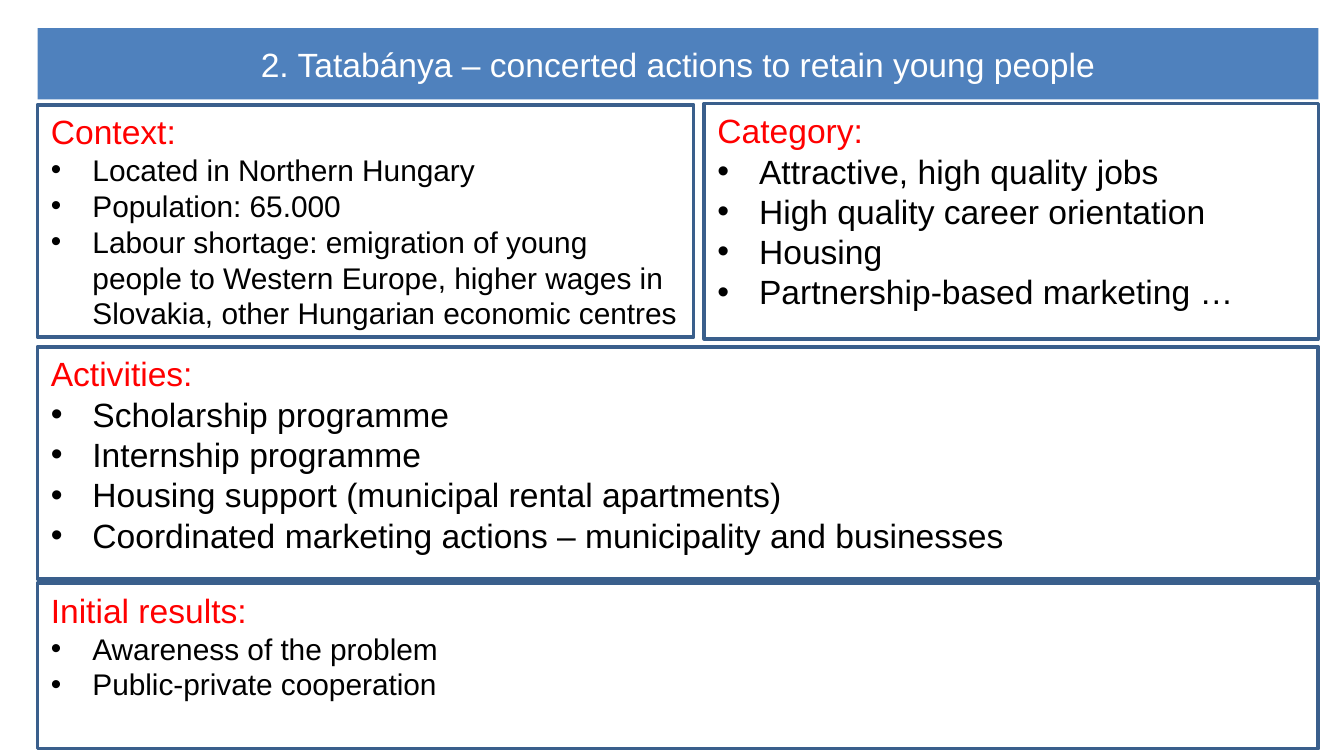
from lxml import etree
from pptx import Presentation
from pptx import util as u
from pptx.dml.color import RGBColor
from pptx.enum import shapes, text
from pptx.oxml import ns

BLUE = RGBColor(0x4F, 0x81, 0xBD)
DARK_BLUE = RGBColor(0x3A, 0x5F, 0x8C)
WHITE = RGBColor(0xFF, 0xFF, 0xFF)
RED = RGBColor(0xFF, 0x00, 0x00)
BLACK = RGBColor(0x00, 0x00, 0x00)

# Grid in inches: one full-width column, split in two on the second row
LEFT, FULL_WIDTH, GAP = 0.28, 9.53, 0.08
CONTEXT_WIDTH = 4.88
CATEGORY_LEFT = LEFT + CONTEXT_WIDTH + GAP
CATEGORY_WIDTH = LEFT + FULL_WIDTH - CATEGORY_LEFT
PANEL_HEIGHT = 1.73
INDENT = u.Inches(0.31)

presentation = Presentation()
presentation.slide_width = u.Inches(10)
presentation.slide_height = presentation.slide_width * 9 // 16
slide = presentation.slides.add_slide(presentation.slide_layouts[6])


def add_box(bounds, fill):
    shape = slide.shapes.add_shape(
        shapes.MSO_SHAPE.RECTANGLE, *[u.Inches(length) for length in bounds])
    shape.shadow.inherit = False
    shape.fill.solid()
    shape.fill.fore_color.rgb = fill
    shape.text_frame.word_wrap = True
    return shape


def write(paragraph, words, size, color, alignment=text.PP_ALIGN.LEFT):
    paragraph.text = words
    paragraph.alignment = alignment
    font = paragraph.runs[0].font
    font.color.rgb = color
    for name, value in {"name": "Arial", "size": u.Pt(size)}.items():
        setattr(font, name, value)


banner = add_box((LEFT, 0.21, FULL_WIDTH, 0.53), BLUE)
banner.line.fill.background()
banner.text_frame.vertical_anchor = text.MSO_ANCHOR.MIDDLE
write(banner.text_frame.paragraphs[0],
      "2. Tatabánya – concerted actions to retain young people",
      18, WHITE, text.PP_ALIGN.CENTER)

# Bounds, heading, bullet size, bullets
panels = [
    ((LEFT, 0.78, CONTEXT_WIDTH, PANEL_HEIGHT), "Context:", 16, [
        "Located in Northern Hungary",
        "Population: 65.000",
        "Labour shortage: emigration of young people to Western Europe, "
        "higher wages in Slovakia, other Hungarian economic centres"]),
    ((CATEGORY_LEFT, 0.77, CATEGORY_WIDTH, 1.75), "Category:", 18, [
        "Attractive, high quality jobs",
        "High quality career orientation",
        "Housing",
        "Partnership-based marketing …"]),
    ((LEFT, 2.58, FULL_WIDTH, PANEL_HEIGHT), "Activities:", 18, [
        "Scholarship programme",
        "Internship programme",
        "Housing support (municipal rental apartments)",
        "Coordinated marketing actions – municipality and businesses"]),
    ((LEFT, 4.34, FULL_WIDTH, 1.23), "Initial results:", 16, [
        "Awareness of the problem",
        "Public-private cooperation"]),
]

for bounds, heading, bullet_size, bullets in panels:
    panel = add_box(bounds, WHITE)
    panel.line.color.rgb = DARK_BLUE
    panel.line.width = u.Pt(2)
    frame = panel.text_frame
    frame.vertical_anchor = text.MSO_ANCHOR.TOP
    write(frame.paragraphs[0], heading, 18, RED)
    for bullet in bullets:
        paragraph = frame.add_paragraph()
        properties = paragraph._p.get_or_add_pPr()
        properties.set("marL", str(INDENT))
        properties.set("indent", str(-INDENT))
        for tag, key, value in (("a:buFont", "typeface", "Arial"),
                                ("a:buChar", "char", "•")):
            etree.SubElement(properties, ns.qn(tag)).set(key, value)
        write(paragraph, bullet, bullet_size, BLACK)

presentation.save("out.pptx")
